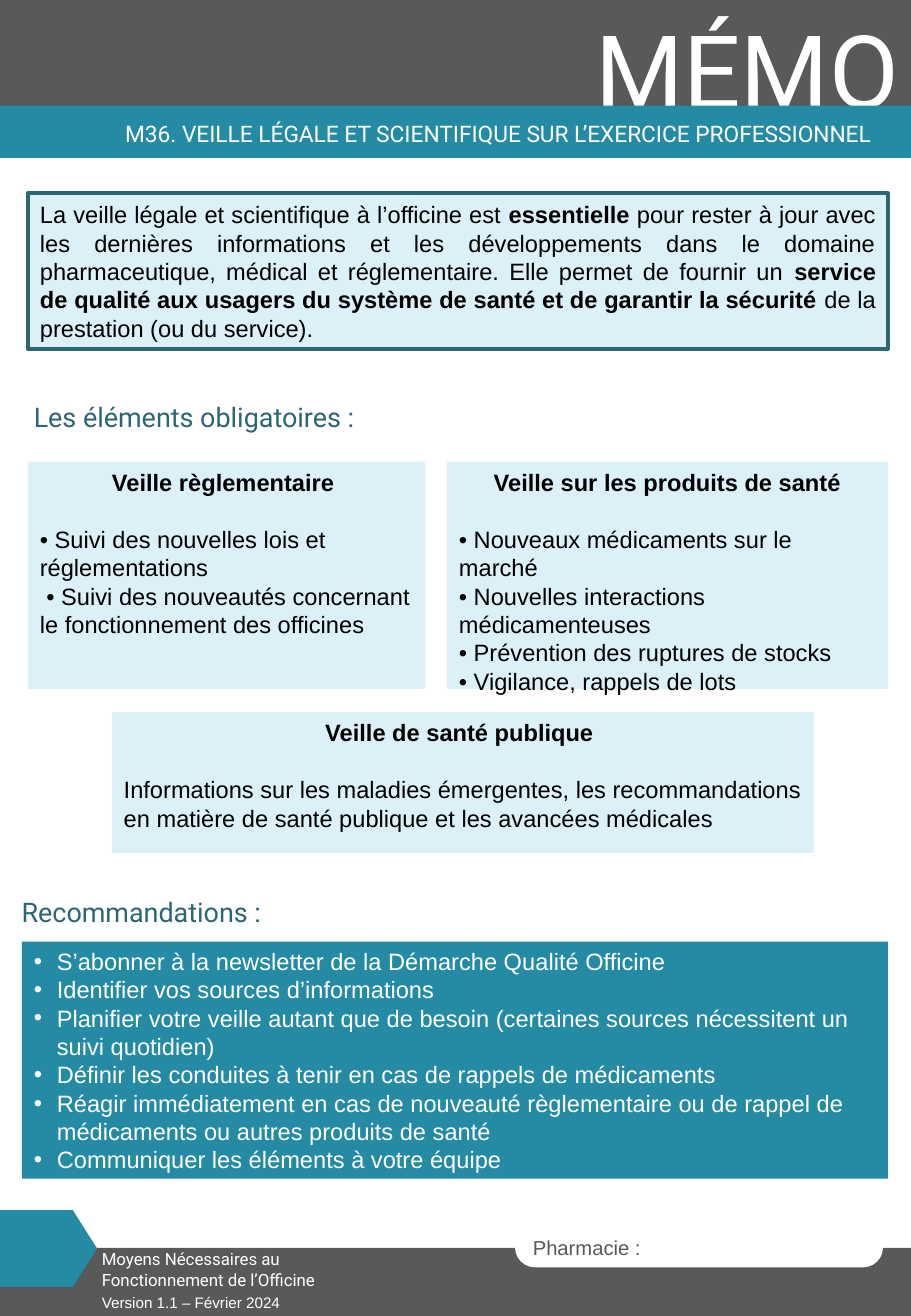
import dataclasses

import lxml.etree
import pptx
import pptx.dml.color
import pptx.enum.shapes
import pptx.enum.text
import pptx.oxml.ns
import pptx.util

ALIGN = pptx.enum.text.PP_ALIGN
ANCHOR = pptx.enum.text.MSO_ANCHOR
SHAPE = pptx.enum.shapes.MSO_SHAPE


@dataclasses.dataclass(frozen=True)
class Theme:
    grey: str = "595959"
    teal: str = "258BA4"
    dark_teal: str = "2C6672"
    pale: str = "CDECF4"
    white: str = "FFFFFF"
    black: str = "000000"
    body_font: str = "Arial"
    title_font: str = "Roboto"
    banner: float = 60
    heading: float = 16
    body: float = 14
    title: float = 13.5
    label: float = 12
    footer: float = 10
    version: float = 9
    card_gap: float = 17
    pale_alpha: int = 70
    border: float = 2.25


class Memo:
    EMU_PER_PX = 9144
    BULLET_INDENT = 19

    def __init__(self, slide, theme):
        self.slide = slide
        self.theme = theme

    def px(self, *lengths):
        return [pptx.util.Emu(length * self.EMU_PER_PX) for length in lengths]

    def rgb(self, colour):
        return pptx.dml.color.RGBColor.from_string(colour)

    def block(self, box, fill, kind=SHAPE.RECTANGLE, adjust=None, alpha=None, border=None):
        shape = self.slide.shapes.add_shape(kind, *self.px(*box))
        shape.shadow.inherit = False
        shape.fill.solid()
        shape.fill.fore_color.rgb = self.rgb(fill)
        if adjust is not None:
            shape.adjustments[0] = adjust
        if alpha is not None:
            colour = shape.fill._xPr.find(".//" + pptx.oxml.ns.qn("a:srgbClr"))
            lxml.etree.SubElement(colour, pptx.oxml.ns.qn("a:alpha"), val=str(alpha * 1000))
        if border:
            shape.line.color.rgb = self.rgb(border)
            shape.line.width = pptx.util.Pt(self.theme.border)
        else:
            shape.line.fill.background()
        return shape

    def frame(self, shape, anchor=ANCHOR.TOP, wrap=True):
        frame = shape.text_frame
        for name, value in {"word_wrap": wrap, "vertical_anchor": anchor}.items():
            setattr(frame, name, value)
        return frame

    def paragraph(self, frame, runs, size, colour, font=None, first=True, bullet=False, **formats):
        paragraph = frame.paragraphs[0] if first else frame.add_paragraph()
        if bullet:
            properties = paragraph._p.get_or_add_pPr()
            indent, = self.px(self.BULLET_INDENT)
            properties.set("marL", str(indent))
            properties.set("indent", str(-indent))
            lxml.etree.SubElement(properties, pptx.oxml.ns.qn("a:buFont"), typeface="Arial")
            lxml.etree.SubElement(properties, pptx.oxml.ns.qn("a:buChar"), char="•")
        for name, value in {"alignment": ALIGN.LEFT, **formats}.items():
            setattr(paragraph, name, value)
        for text, bold in runs:
            run = paragraph.add_run()
            run.text = text
            style = {"size": pptx.util.Pt(size), "name": font or self.theme.body_font, "bold": bold}
            for name, value in style.items():
                setattr(run.font, name, value)
            run.font.color.rgb = self.rgb(colour)
        return paragraph

    def text(self, box, words, size, colour, font=None, anchor=ANCHOR.TOP, wrap=True, **formats):
        holder = self.slide.shapes.add_textbox(*self.px(*box))
        self.paragraph(self.frame(holder, anchor, wrap), [(words, False)], size, colour, font, **formats)

    def heading(self, left, top, words):
        self.text((left, top, 726, 32), words, self.theme.heading, self.theme.dark_teal,
                  self.theme.title_font, line_spacing=0.9)

    def panel(self, box, fill, **options):
        return self.block(box, fill, SHAPE.ROUNDED_RECTANGLE, 0, **options)

    def card(self, box, title, lines):
        theme = self.theme
        frame = self.frame(self.panel(box, theme.pale, alpha=theme.pale_alpha))
        self.paragraph(frame, [(title, True)], theme.body, theme.black, alignment=ALIGN.CENTER)
        for number, line in enumerate(lines):
            gap = pptx.util.Pt(0 if number else theme.card_gap)
            self.paragraph(frame, [(line, False)], theme.body, theme.black, first=False, space_before=gap)

    def intro(self, box, runs):
        theme = self.theme
        panel = self.panel(box, theme.pale, alpha=theme.pale_alpha, border=theme.dark_teal)
        self.paragraph(self.frame(panel, ANCHOR.MIDDLE), runs, theme.body, theme.black,
                       alignment=ALIGN.JUSTIFY)

    def bullets(self, box, lines):
        theme = self.theme
        frame = self.frame(self.panel(box, theme.teal), ANCHOR.MIDDLE)
        for number, line in enumerate(lines):
            self.paragraph(frame, [(line, False)], theme.body, theme.white, first=number == 0, bullet=True)

    def header(self, banner, title):
        theme = self.theme
        self.block((0, 0, 750, 88), theme.grey)
        self.text((463, 1, 287, 111), banner, theme.banner, theme.white, theme.title_font,
                  wrap=False, alignment=ALIGN.RIGHT)
        self.block((0, 87, 750, 43), theme.teal)
        self.text((0, 96, 727, 31), title, theme.title, theme.white, theme.title_font,
                  ANCHOR.MIDDLE, alignment=ALIGN.RIGHT, line_spacing=0.9)

    def footer(self, label, programme, version):
        theme = self.theme
        self.block((0, 1027, 750, 56), theme.grey)
        pharmacy = self.block((424, 1010, 303, 33), theme.white, SHAPE.ROUNDED_RECTANGLE, 0.5)
        self.paragraph(self.frame(pharmacy, ANCHOR.MIDDLE), [(label, False)], theme.label, theme.grey)
        self.block((0, 996, 80, 63), theme.teal, SHAPE.PENTAGON, 0.317)
        self.text((74, 1023, 253, 44), programme, theme.footer, theme.white, theme.title_font)
        self.text((74, 1059, 588, 25), version, theme.version, theme.white)


def main():
    presentation = pptx.Presentation()
    presentation.slide_width = pptx.util.Inches(7.5)
    presentation.slide_height = pptx.util.Inches(10.83)
    memo = Memo(presentation.slides.add_slide(presentation.slide_layouts[6]), Theme())

    memo.header("MÉMO", "M36. VEILLE LÉGALE ET SCIENTIFIQUE SUR L’EXERCICE PROFESSIONNEL")
    memo.footer("Pharmacie :", "Moyens Nécessaires au Fonctionnement de l’Officine",
                "Version 1.1 – Février 2024")
    memo.intro((23, 159, 708, 128), [
        ("La veille légale et scientifique à l’officine est ", False),
        ("essentielle", True),
        (" pour rester à jour avec les dernières informations et les développements dans le domaine "
         "pharmaceutique, médical et réglementaire. Elle permet de fournir un ", False),
        ("service de qualité aux usagers du système de santé et de garantir la sécurité ", True),
        ("de la prestation (ou du service).", False),
    ])

    memo.heading(18, 328, "Les éléments obligatoires :")
    memo.card((23, 380, 327, 187), "Veille règlementaire ", [
        "• Suivi des nouvelles lois et réglementations",
        " • Suivi des nouveautés concernant le fonctionnement des officines",
    ])
    memo.card((368, 380, 363, 187), "Veille sur les produits de santé", [
        "• Nouveaux médicaments sur le marché",
        "• Nouvelles interactions médicamenteuses",
        "• Prévention des ruptures de stocks",
        "• Vigilance, rappels de lots",
    ])
    memo.card((92, 586, 578, 116), "Veille de santé publique ", [
        "Informations sur les maladies émergentes, les recommandations en matière de santé publique "
        "et les avancées médicales",
    ])

    memo.heading(8, 735, "Recommandations :")
    memo.bullets((18, 775, 713, 195), [
        "S’abonner à la newsletter de la Démarche Qualité Officine",
        "Identifier vos sources d’informations",
        "Planifier votre veille autant que de besoin (certaines sources nécessitent un suivi quotidien)",
        "Définir les conduites à tenir en cas de rappels de médicaments",
        "Réagir immédiatement en cas de nouveauté règlementaire ou de rappel de médicaments "
        "ou autres produits de santé",
        "Communiquer les éléments à votre équipe",
    ])
    presentation.save("out.pptx")


if __name__ == "__main__":
    main()
